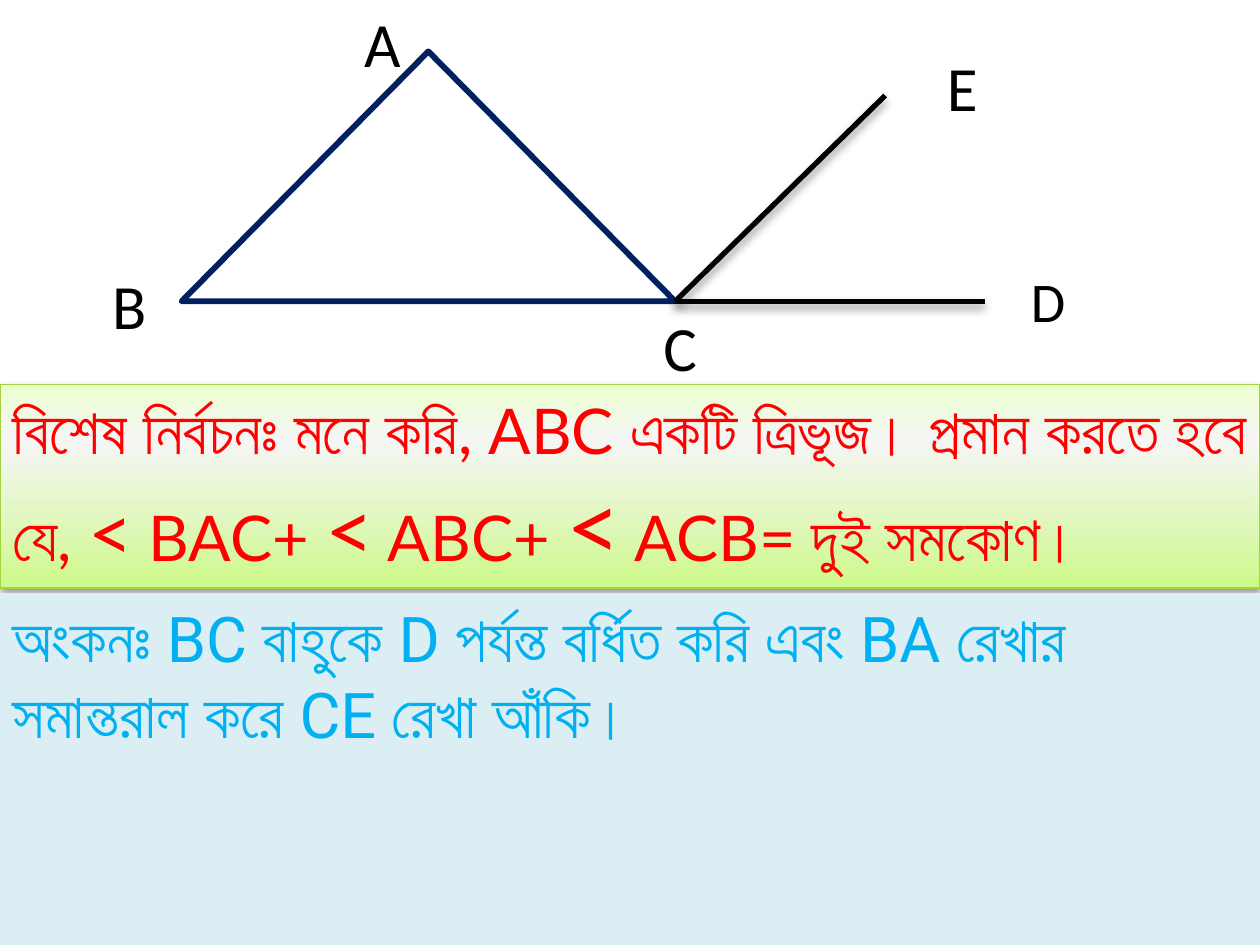
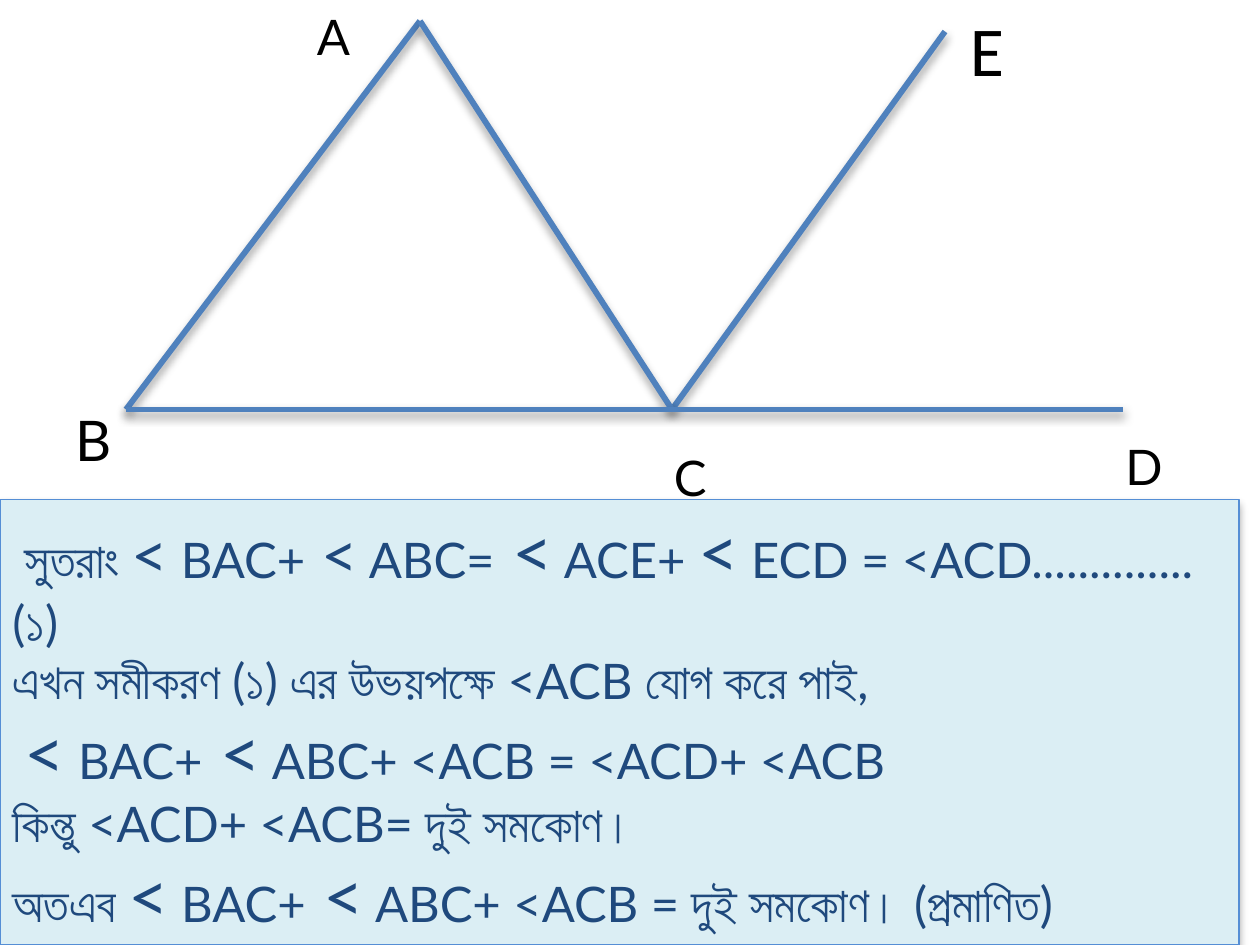
from dataclasses import dataclass

from lxml import etree
from pptx import Presentation
from pptx.dml.color import RGBColor
from pptx.enum.shapes import MSO_CONNECTOR, MSO_SHAPE
from pptx.enum.text import MSO_ANCHOR, PP_ALIGN
from pptx.oxml.ns import qn
from pptx.util import Inches, Pt

STRAIGHT = MSO_CONNECTOR.STRAIGHT
RECTANGLE = MSO_SHAPE.RECTANGLE
TRIANGLE = MSO_SHAPE.ISOSCELES_TRIANGLE
TOP, MIDDLE = MSO_ANCHOR.TOP, MSO_ANCHOR.MIDDLE
LEFT = PP_ALIGN.LEFT

# Grid: 120 columns by 90 rows of square cells
WIDTH, HEIGHT = Inches(10), Inches(7.5)
CELL = WIDTH / 120


@dataclass(frozen=True)
class Theme:
    label_font: str = "Calibri"
    proof_font: str = "Lato"
    construction_font: str = "Roboto"
    black: str = "000000"
    navy: str = "002060"
    blue: str = "4F81BD"
    red: str = "FF0000"
    sky: str = "00B0F0"
    proof_ink: str = "1F497D"
    pale_blue: str = "DBEEF4"
    pale_blue_edge: str = "558ED5"
    green_edge: str = "A4D340"
    # Position, colour and opacity in percent, from bottom to top
    green_fade: tuple = ((0, "CDF989", 100), (73, "FFFFFF", 90), (100, "EBFFCE", 100))
    thin: float = 0.75
    ray: float = 3
    side: float = 3.35
    statement_size: int = 36
    proof_size: int = 28
    shadow_blur: float = 5.2
    shadow_distance: float = 3
    shadow_opacity: int = 40


THEME = Theme()


@dataclass(frozen=True)
class Span:
    text: str
    size: int | None = None


@dataclass(frozen=True)
class Label:
    letter: str
    column: float
    row: float
    size: int
    font: str = THEME.label_font


@dataclass(frozen=True)
class Segment:
    start: tuple[float, float]
    end: tuple[float, float]
    color: str
    weight: float


@dataclass(frozen=True)
class Panel:
    column: float
    row: float
    columns: float
    rows: float
    fill: str | tuple
    edge: str | None
    font: str
    ink: str
    size: int
    anchor: MSO_ANCHOR
    paragraphs: tuple[tuple[Span, ...], ...]


def cells(*counts: float) -> list[int]:
    return [round(count * CELL) for count in counts]


def rgb(color: str) -> RGBColor:
    return RGBColor.from_string(color)


def add_color(parent, color: str, opacity: int) -> None:
    node = etree.SubElement(parent, qn("a:srgbClr"), val=color)
    if opacity < 100:
        etree.SubElement(node, qn("a:alpha"), val=str(opacity * 1000))


def set_shadow(shape, visible: bool = True) -> None:
    """Replace the theme shadow with a soft one below the shape, or none."""
    properties = shape._element.spPr
    effects = properties.find(qn("a:effectLst"))
    if effects is None:
        effects = etree.SubElement(properties, qn("a:effectLst"))
    if visible:
        shadow = etree.SubElement(
            effects, qn("a:outerShdw"),
            blurRad=str(Pt(THEME.shadow_blur)), dist=str(Pt(THEME.shadow_distance)),
            dir="5400000", rotWithShape="0")
        add_color(shadow, THEME.black, THEME.shadow_opacity)


def set_fade(shape, stops: tuple) -> None:
    shape.fill.gradient()
    shape.fill.gradient_angle = 90
    stop_list = shape._element.spPr.find(".//" + qn("a:gsLst"))
    for old_stop in list(stop_list):
        stop_list.remove(old_stop)
    for position, color, opacity in stops:
        stop = etree.SubElement(stop_list, qn("a:gs"), pos=str(position * 1000))
        add_color(stop, color, opacity)


def style_font(font, name: str, size: int, color: str) -> None:
    font.name, font.size = name, Pt(size)
    font.color.rgb = rgb(color)


def draw_label(page, label: Label) -> None:
    rows = label.size / 5
    box = page.shapes.add_textbox(*cells(label.column, label.row, 6, rows))
    box.text_frame.word_wrap = True
    para = box.text_frame.paragraphs[0]
    para.text = label.letter
    style_font(para.font, label.font, label.size, THEME.black)


def draw_segment(page, segment: Segment) -> None:
    line = page.shapes.add_connector(STRAIGHT, *cells(*segment.start, *segment.end))
    line.line.color.rgb = rgb(segment.color)
    line.line.width = Pt(segment.weight)
    set_shadow(line)


def draw_triangle(page, column: float, row: float, columns: float, rows: float) -> None:
    triangle = page.shapes.add_shape(TRIANGLE, *cells(column, row, columns, rows))
    triangle.fill.background()
    triangle.line.color.rgb = rgb(THEME.navy)
    triangle.line.width = Pt(THEME.side)
    set_shadow(triangle, visible=False)


def draw_panel(page, panel: Panel) -> None:
    shape = page.shapes.add_shape(
        RECTANGLE, *cells(panel.column, panel.row, panel.columns, panel.rows))
    if isinstance(panel.fill, tuple):
        set_fade(shape, panel.fill)
    else:
        shape.fill.solid()
        shape.fill.fore_color.rgb = rgb(panel.fill)
    if panel.edge:
        shape.line.color.rgb = rgb(panel.edge)
        shape.line.width = Pt(THEME.thin)
    else:
        shape.line.fill.background()
    set_shadow(shape, visible=panel.edge is not None)

    frame = shape.text_frame
    frame.word_wrap = True
    frame.vertical_anchor = panel.anchor
    for index, spans in enumerate(panel.paragraphs):
        para = frame.add_paragraph() if index else frame.paragraphs[0]
        para.alignment = LEFT
        style_font(para.font, panel.font, panel.size, panel.ink)
        for span in spans:
            run = para.add_run()
            run.text = span.text
            style_font(run.font, panel.font, span.size or panel.size, panel.ink)


# Slide 1: the theorem and its construction
def draw_statement(page) -> None:
    corner_c = (64.3, 28.7)
    draw_triangle(page, 17.3, 4.9, 47, 23.8)
    for end in ((93.8, 28.7), (84.3, 9.1)):
        draw_segment(page, Segment(corner_c, end, THEME.black, THEME.ray))
    for label in (
        Label("B", 9.5, 24.8, 36),
        Label("C", 62, 28.8, 36),
        Label("A", 33.5, -0.2, 36),
        Label("E", 89, 4, 36),
        Label("D", 97, 24.8, 32),
    ):
        draw_label(page, label)
    draw_panel(page, Panel(
        0, 36.6, 120, 19.4, THEME.green_fade, THEME.green_edge,
        THEME.proof_font, THEME.red, THEME.statement_size, MIDDLE,
        ((
            Span("বিশেষ নির্বচনঃ মনে করি, ABC একটি ত্রিভূজ। প্রমান করতে হবে যে, "),
            Span("<", 44), Span(" BAC+ "),
            Span("<", 48), Span(" ABC+ "),
            Span("<", 54), Span(" ACB= দুই সমকোণ।"),
        ),)))
    draw_panel(page, Panel(
        0, 56.5, 120, 33.5, THEME.pale_blue, None,
        THEME.construction_font, THEME.sky, THEME.statement_size, TOP,
        ((Span("অংকনঃ BC বাহুকে D পর্যন্ত বর্ধিত করি এবং BA রেখার "
               "সমান্তরাল করে CE রেখা আঁকি।"),),)))


# Slide 2: the end of the proof
def draw_proof(page) -> None:
    draw_panel(page, Panel(
        0, 47.6, 118, 42.4, THEME.pale_blue, THEME.pale_blue_edge,
        THEME.proof_font, THEME.proof_ink, THEME.proof_size, MIDDLE,
        (
            (Span(" সুতরাং "), Span("<", 36), Span(" BAC+"),
             Span(" <", 36), Span(" ABC="),
             Span(" <", 40), Span(" ACE+ "),
             Span("<", 40), Span(" ECD = <ACD..............(১)")),
            (Span("এখন সমীকরণ (১) এর উভয়পক্ষে <ACB যোগ করে পাই,"),),
            (Span(" "), Span("<", 40), Span(" BAC+"),
             Span(" <", 40), Span(" ABC+ <ACB = <ACD+ <ACB")),
            (Span("কিন্তু <ACD+ <ACB= দুই সমকোণ।"),),
            (Span("অতএব "), Span("<", 40), Span(" BAC+"),
             Span(" <", 40), Span(" ABC+ <ACB = দুই সমকোণ। (প্রমাণিত)")),
        )))
    corner_a, corner_b, corner_c = (40, 2), (12, 39), (64, 39)
    end_d, end_e = (107, 39), (90, 3)
    for start, end in ((corner_a, corner_b), (end_e, corner_c),
                       (corner_a, corner_c), (corner_b, end_d)):
        draw_segment(page, Segment(start, end, THEME.blue, THEME.side))
    for label in (
        Label("A", 29, 0, 28, THEME.proof_font),
        Label("B", 6, 38, 32, THEME.proof_font),
        Label("C", 63, 42, 28, THEME.proof_font),
        Label("D", 106, 41, 28, THEME.proof_font),
        Label("E", 91.2, 0, 40),
    ):
        draw_label(page, label)


def main() -> None:
    deck = Presentation()
    deck.slide_width, deck.slide_height = WIDTH, HEIGHT
    blank = deck.slide_layouts[6]
    for draw_page in (draw_statement, draw_proof):
        draw_page(deck.slides.add_slide(blank))
    deck.save("out.pptx")


if __name__ == "__main__":
    main()
